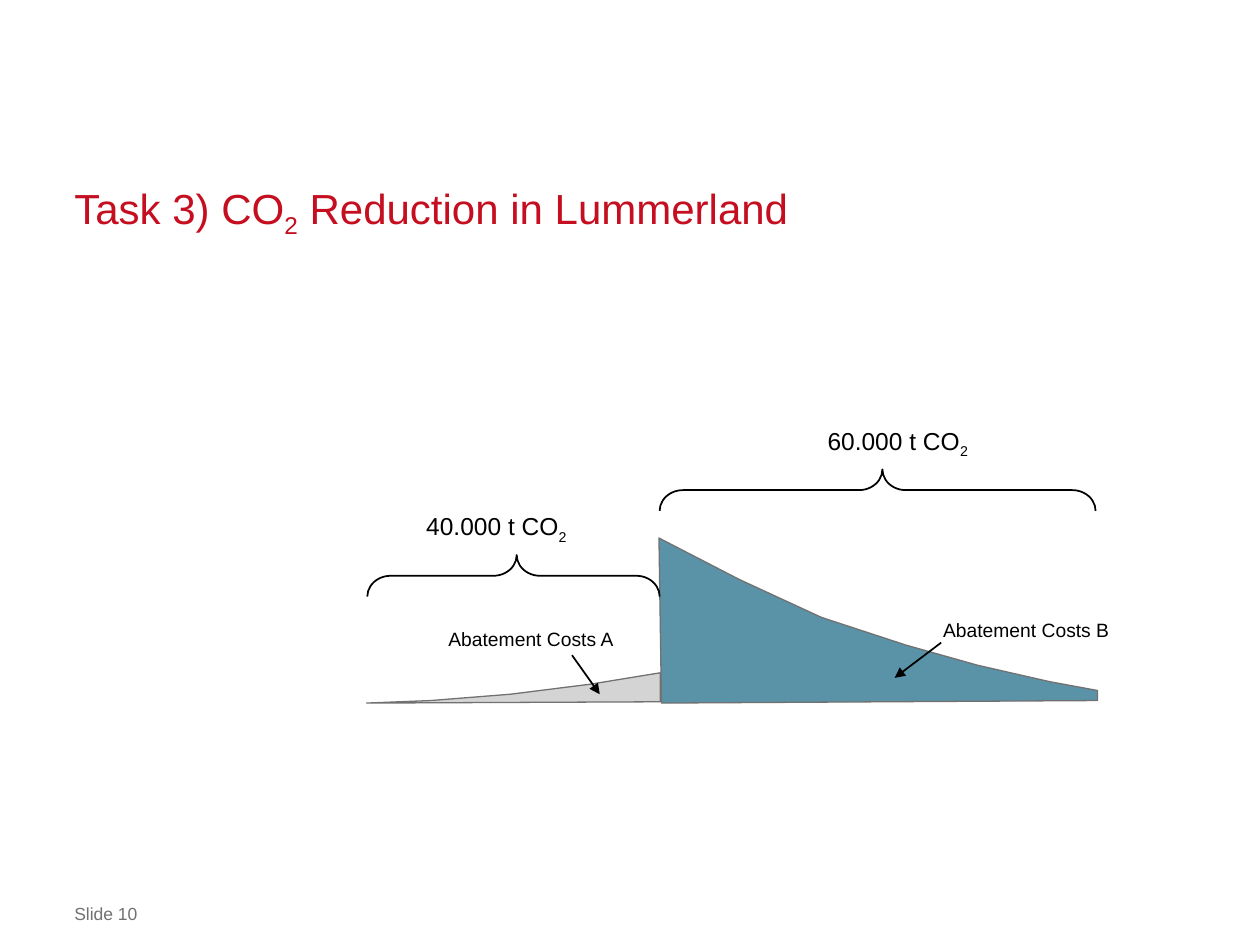
"""Builds the slide on abatement costs for the CO2 reduction task."""
from dataclasses import dataclass

from lxml.etree import SubElement
from pptx import Presentation
from pptx.dml.color import RGBColor
from pptx.enum.shapes import MSO_CONNECTOR as Connector, MSO_SHAPE as Shape
from pptx.enum.text import MSO_ANCHOR as Anchor, MSO_AUTO_SIZE as AutoSize, PP_ALIGN as Align
from pptx.oxml.ns import qn
from pptx.slide import Slide
from pptx.util import Inches, Pt

COLORS = {"title": "C50E1F", "grey": "717171", "ink": "000000", "paper": "FFFFFF",
          "costs_a": "BBBBBB", "costs_b": "146683"}
COSTS_A = [(2.91, 5.58), (5.24, 5.57), (5.24, 5.34), (4.69, 5.43), (4.05, 5.51), (3.42, 5.56)]
COSTS_B = [(5.23, 4.27), (5.25, 5.58), (8.71, 5.56), (8.71, 5.48), (8.33, 5.41),
           (7.76, 5.28), (7.19, 5.12), (6.52, 4.9), (5.87, 4.6)]


def rgb(name):
    return RGBColor.from_string(COLORS[name])


@dataclass
class Sheet:
    """Holds the slide and its text style, and draws each kind of element."""
    slide: Slide
    font: str = "Arial"

    def fill_text(self, frame, parts, size, color, align=Align.LEFT):
        """Fills a frame with parts of text, every second one a subscript."""
        paragraph = frame.paragraphs[0]
        paragraph.alignment = align
        for index, part in enumerate(parts):
            run = paragraph.add_run()
            run.text = part
            if index % 2:
                run._r.get_or_add_rPr().set("baseline", "-25000")
        font = paragraph.font
        font.name, font.size, font.color.rgb = self.font, Pt(size), rgb(color)
        return paragraph

    def clear_margins(self, frame):
        frame.margin_left = frame.margin_right = frame.margin_top = frame.margin_bottom = 0

    def title(self, box, *parts):
        title = self.slide.shapes.title
        title.left, title.top, title.width, title.height = map(Inches, box)
        frame = title.text_frame
        self.clear_margins(frame)
        frame.vertical_anchor = Anchor.BOTTOM
        frame.auto_size = AutoSize.SHAPE_TO_FIT_TEXT
        self.fill_text(frame, parts, 24, "title").line_spacing = Pt(30)

    def footer(self, box, text):
        frame = self.slide.shapes.add_textbox(*map(Inches, box)).text_frame
        self.clear_margins(frame)
        frame.word_wrap = True
        self.fill_text(frame, [text], 10, "grey")

    def label(self, box, text):
        frame = self.slide.shapes.add_textbox(*map(Inches, box)).text_frame
        frame.word_wrap = False
        frame.auto_size = AutoSize.SHAPE_TO_FIT_TEXT
        self.fill_text(frame, [text], 11, "ink", Align.CENTER)

    def tonnage(self, box, *parts):
        panel = self.slide.shapes.add_shape(Shape.RECTANGLE, *map(Inches, box))
        panel.shadow.inherit = False
        panel.fill.solid()
        panel.fill.fore_color.rgb = rgb("paper")
        panel.line.fill.background()
        frame = panel.text_frame
        frame.word_wrap = False
        frame.vertical_anchor = Anchor.TOP
        frame.auto_size = AutoSize.SHAPE_TO_FIT_TEXT
        self.fill_text(frame, parts, 14, "ink", Align.CENTER)

    def area(self, corners, color, opacity):
        start, *rest = [(Inches(x), Inches(y)) for x, y in corners]
        builder = self.slide.shapes.build_freeform(*start)
        builder.add_line_segments(rest, close=True)
        area = builder.convert_to_shape()
        area.shadow.inherit = False
        area.fill.solid()
        area.fill.fore_color.rgb = rgb(color)
        shade = area._element.spPr.find(qn("a:solidFill")).find(qn("a:srgbClr"))
        SubElement(shade, qn("a:alpha")).set("val", str(opacity * 1000))
        area.line.color.rgb = rgb("grey")
        area.line.width = Pt(0.75)

    def arrow(self, start, end):
        arrow = self.slide.shapes.add_connector(Connector.STRAIGHT, *map(Inches, start + end))
        arrow.line.color.rgb = rgb("ink")
        arrow.line.width = Pt(1)
        properties = arrow._element.spPr
        SubElement(properties.find(qn("a:ln")), qn("a:tailEnd")).set("type", "triangle")
        SubElement(properties, qn("a:effectLst"))

    def brace(self, box):
        """Draws a left brace turned to open downwards."""
        brace = self.slide.shapes.add_shape(Shape.LEFT_BRACE, *map(Inches, box))
        brace.rotation = 90
        brace.adjustments[0], brace.adjustments[1] = 0.562, 0.489
        brace.shadow.inherit = False
        brace.fill.background()
        brace.line.color.rgb = rgb("ink")
        brace.line.width = Pt(1)


def main():
    deck = Presentation()
    deck.slide_width, deck.slide_height = Inches(10), Inches(7.5)
    sheet = Sheet(deck.slides.add_slide(deck.slide_layouts[5]))
    sheet.title((0.59, 1.51, 8.82, 0.39), "Task 3) CO", "2", " Reduction in Lummerland")
    sheet.footer((0.59, 7.17, 8.82, 0.17), "Slide 10")
    sheet.area(COSTS_B, "costs_b", 70)
    sheet.tonnage((3.23, 4.01, 1.42, 0.34), "40.000 t CO", "2")
    sheet.label((7.38, 4.86, 1.53, 0.29), "Abatement Costs B")
    sheet.label((3.45, 4.93, 1.53, 0.29), "Abatement Costs A")
    sheet.area(COSTS_A, "costs_a", 62)
    sheet.arrow((4.54, 5.2), (4.76, 5.51))
    sheet.arrow((7.47, 5.1), (7.1, 5.38))
    sheet.brace((3.91, 3.41, 0.33, 2.32))
    sheet.tonnage((6.44, 3.33, 1.37, 0.34), "60.000 t CO", "2")
    sheet.brace((6.8, 2.16, 0.33, 3.46))
    deck.save("out.pptx")


if __name__ == "__main__":
    main()
